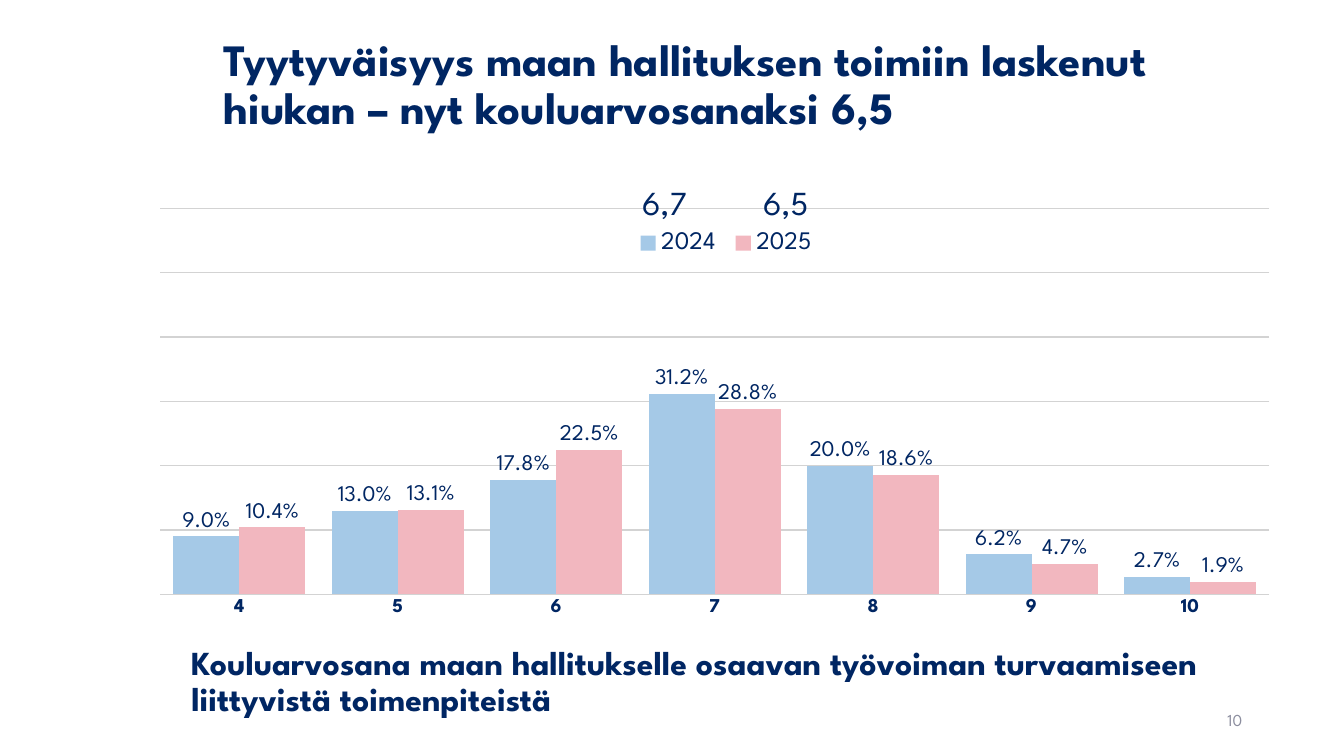
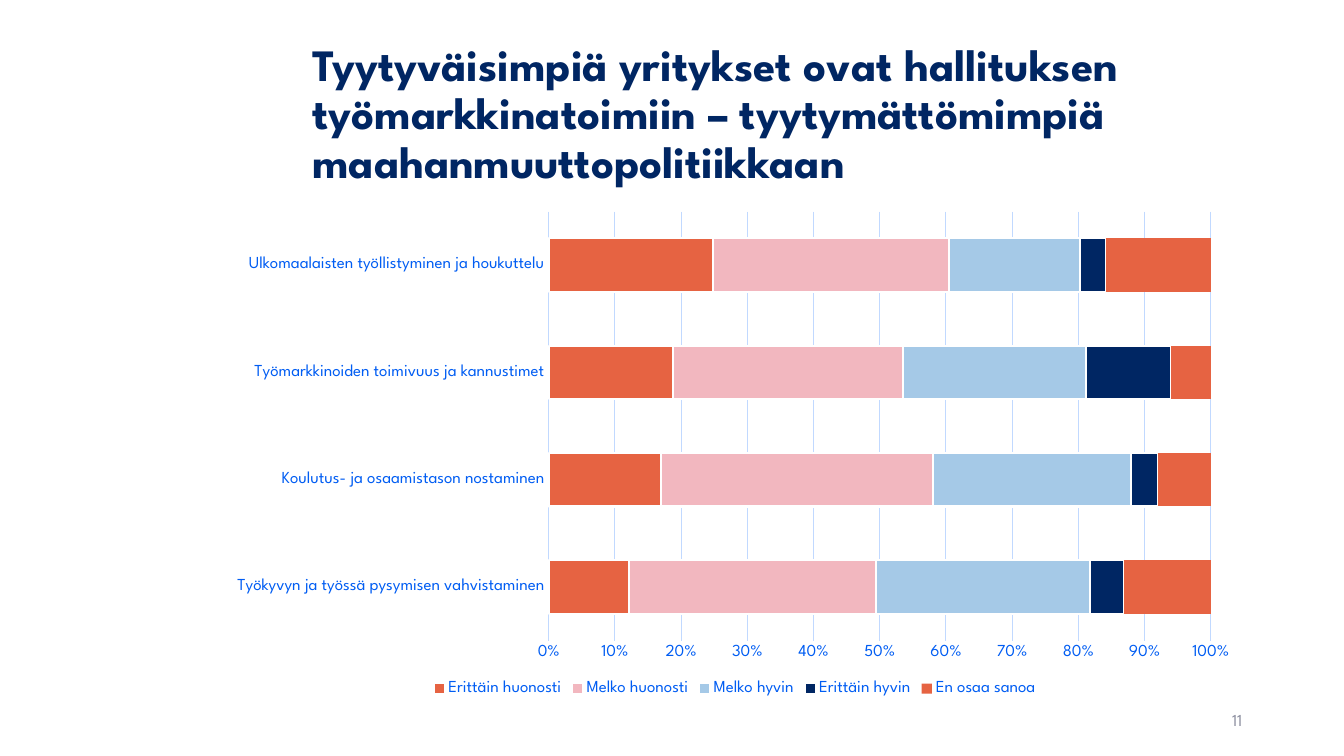
"""Build two slides on how firms rate the government's measures."""
from lxml.etree import SubElement as Sub
from pptx import Presentation
from pptx.chart.data import CategoryChartData as Data
from pptx.dml.color import RGBColor as RGB
from pptx.enum.chart import XL_CHART_TYPE as Kind, XL_LABEL_POSITION as Spot
from pptx.enum.chart import XL_LEGEND_POSITION as Side, XL_TICK_MARK as Tick
from pptx.enum.text import MSO_ANCHOR as Anchor, MSO_AUTO_SIZE as Auto, PP_ALIGN as Align
from pptx.oxml.ns import qn
from pptx.util import Pt

PX = 9144
FACE = "League Spartan"
NAVY = RGB(0x00, 0x26, 0x63)
BLUE = RGB(0x00, 0x5D, 0xF3)
SKY = RGB(0xA5, 0xC9, 0xE7)
ROSE = RGB(0xF2, 0xB7, 0xBF)
RUST = RGB(0xE6, 0x63, 0x42)
PALE = RGB(0xC1, 0xD9, 0xFF)
SILVER = RGB(0xD3, 0xD3, 0xD3)
GREY = RGB(0x8C, 0x8E, 0x9F)
WHITE = RGB(0xFF, 0xFF, 0xFF)


def write(shape, text, box, size=32, color=NAVY, bold=False, align=Align.LEFT, tab=0):
    shape.left, shape.top, shape.width, shape.height = [n * PX for n in box]
    frame = shape.text_frame
    frame.word_wrap = True
    frame.auto_size = Auto.NONE
    frame.vertical_anchor = Anchor.MIDDLE
    frame.text = text
    para = frame.paragraphs[0]
    if tab:
        stops = Sub(para._p.get_or_add_pPr(), qn("a:tabLst"))
        Sub(stops, qn("a:tab"), pos=str(tab * PX), algn="l")
    para.alignment = align
    para.line_spacing = 0.9
    font = para.runs[0].font
    font.name, font.size, font.bold = FACE, Pt(size), bold
    font.color.rgb = color


def lay(node, index, box, inner=False):
    for old in node.findall(qn("c:layout")):
        node.remove(old)
    layout = node.makeelement(qn("c:layout"))
    node.insert(index, layout)
    manual = Sub(layout, qn("c:manualLayout"))
    if inner:
        Sub(manual, qn("c:layoutTarget"), val="inner")
    for name in ("xMode", "yMode"):
        Sub(manual, qn("c:" + name), val="edge")
    for name, value in zip("xywh", box):
        Sub(manual, qn("c:" + name), val=str(value))


deck = Presentation()
deck.slide_width, deck.slide_height = 1333 * PX, 750 * PX

pages = [
    dict(
        title="Tyytyväisyys maan hallituksen toimiin laskenut hiukan – nyt kouluarvosanaksi 6,5",
        head=(212, 13, 1061, 145), number="10",
        kind=Kind.COLUMN_CLUSTERED, box=(158, 143, 1135, 491),
        plot=(0, 0.13, 0.97, 0.78), gap=40, lap=0,
        grid=SILVER, line=1, ink=NAVY, size=14, bold=True,
        side=Side.TOP, key=18, form="0.0%",
        cats=["4", "5", "6", "7", "8", "9", "10"],
        rows=[
            ("2024", SKY, [0.09, 0.13, 0.178, 0.312, 0.2, 0.062, 0.027]),
            ("2025", ROSE, [0.104, 0.131, 0.225, 0.288, 0.186, 0.047, 0.019]),
        ],
    ),
    dict(
        title="Tyytyväisimpiä yritykset ovat hallituksen työmarkkinatoimiin – "
              "tyytymättömimpiä maahanmuuttopolitiikkaan",
        head=(300, 42, 1000, 145), number="11",
        kind=Kind.BAR_STACKED_100, box=(216, 200, 1026, 495),
        plot=(0.32, 0.02, 0.64, 0.86), gap=100, lap=100,
        grid=PALE, line=0.75, ink=BLUE, size=12, bold=False,
        side=Side.BOTTOM, key=12, form="0%",
        cats=[
            "Työkyvyn ja työssä pysymisen vahvistaminen",
            "Koulutus- ja osaamistason nostaminen",
            "Työmarkkinoiden toimivuus ja kannustimet",
            "Ulkomaalaisten työllistyminen ja houkuttelu",
        ],
        rows=[
            ("Erittäin huonosti", RUST, [12, 17, 19, 25]),
            ("Melko huonosti", ROSE, [37, 41, 35, 36]),
            ("Melko hyvin", SKY, [32, 30, 28, 20]),
            ("Erittäin hyvin", NAVY, [5, 4, 13, 4]),
            ("En osaa sanoa", RUST, [13, 8, 6, 16]),
        ],
    ),
]

slides, charts = [], []
for page in pages:
    slide = deck.slides.add_slide(deck.slide_layouts[5])
    write(slide.shapes.title, page["title"], page["head"], bold=True)
    write(slide.shapes.add_textbox(0, 0, 0, 0), page["number"], (942, 695, 300, 40),
          size=12, color=GREY, align=Align.RIGHT)

    data = Data()
    data.categories = page["cats"]
    for name, color, values in page["rows"]:
        data.add_series(name, values)
    box = [n * PX for n in page["box"]]
    chart = slide.shapes.add_chart(page["kind"], *box, data).chart
    chart.has_title = False
    chart.has_legend = True
    chart.legend.position = page["side"]
    chart.legend.include_in_layout = False
    lay(chart._chartSpace.chart.plotArea, 0, page["plot"], inner=True)

    plot = chart.plots[0]
    plot.gap_width, plot.overlap = page["gap"], page["lap"]
    plot.vary_by_categories = False
    for series, (name, color, values) in zip(plot.series, page["rows"]):
        series.format.fill.solid()
        series.format.fill.fore_color.rgb = color

    cat, val = chart.category_axis, chart.value_axis
    for axis in (cat, val):
        axis.major_tick_mark = axis.minor_tick_mark = Tick.NONE
        axis.format.line.fill.background()
    val.has_major_gridlines = True
    val.major_gridlines.format.line.color.rgb = page["grid"]
    val.major_gridlines.format.line.width = Pt(page["line"])
    val.tick_labels.number_format = page["form"]
    val.tick_labels.number_format_is_linked = False
    for font, size, bold in (
        (chart.font, page["size"], False),
        (chart.legend.font, page["key"], False),
        (cat.tick_labels.font, page["size"], page["bold"]),
        (val.tick_labels.font, page["size"], False),
    ):
        font.name, font.size, font.bold = FACE, Pt(size), bold
        font.color.rgb = page["ink"]
    slides.append(slide)
    charts.append(chart)

grades, views = charts
axis = grades.value_axis
axis.visible = False
axis.minimum_scale, axis.maximum_scale, axis.major_unit = 0, 0.6, 0.1
lay(grades.legend._element, 1, (0.41, 0.16, 0.17, 0.08))
for series in grades.plots[0].series:
    labels = series.data_labels
    labels.show_value = True
    labels.position = Spot.OUTSIDE_END
    labels.number_format = "0.0%"
    labels.number_format_is_linked = False
    labels.font.name, labels.font.size = FACE, Pt(16)
    labels.font.color.rgb = NAVY

for text, box, form in (
    ("Kouluarvosana maan hallitukselle osaavan työvoiman turvaamiseen liittyvistä toimenpiteistä",
     (180, 605, 1061, 145), dict(bold=True)),
    ("6,7\t6,5", (627, 158, 526, 89), dict(tab=120)),
):
    write(slides[0].shapes.add_textbox(0, 0, 0, 0), text, box, size=24, **form)

line = views.category_axis.format.line
line.color.rgb, line.width = PALE, Pt(0.75)
for series in list(views.plots[0].series)[:-1]:
    series.format.line.color.rgb = WHITE
    series.format.line.width = Pt(1.5)

deck.save("out.pptx")
